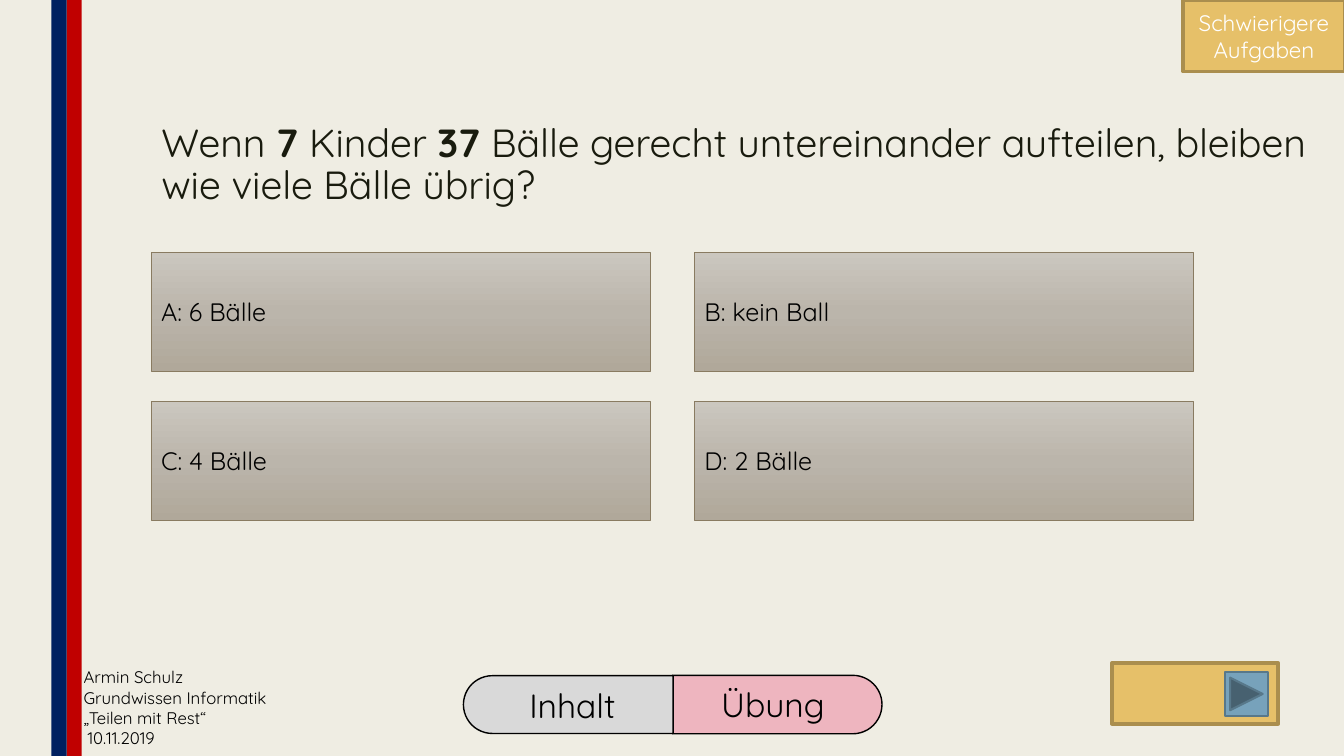
from copy import deepcopy
from dataclasses import dataclass
from typing import NamedTuple

from pptx import Presentation
from pptx.dml.color import RGBColor as RGB
from pptx.enum.shapes import MSO_SHAPE as Shp
from pptx.enum.text import MSO_ANCHOR as Anchor, MSO_AUTO_SIZE as Fit, PP_ALIGN as Align
from pptx.oxml.ns import qn
from pptx.util import Inches, Pt

WIDTH, HEIGHT = Inches(13.333), Inches(7.5)


@dataclass(frozen=True)
class Theme:
    font: str = "Quicksand"
    paper: str = "EFEDE3"
    navy: str = "002060"
    red: str = "C00000"
    black: str = "000000"
    white: str = "FFFFFF"
    ink: str = "191B0E"
    pink: str = "EEB5BF"
    grey: str = "D9D9D9"
    gold: str = "E6C069"
    gold_edge: str = "AA8E4E"
    blue: str = "77A2BB"
    blue_edge: str = "58788A"
    answer_stops: tuple = ("CBC7BF", "BBB5AB", "B0A89A")
    answer_edge: str = "897B61"
    title_pt: int = 28
    tab_pt: int = 24
    answer_pt: int = 18
    tag_pt: int = 16
    footer_pt: int = 12


T = Theme()


class Box(NamedTuple):
    """Place and size in percent of the slide's width and height."""
    x: float
    y: float
    w: float
    h: float

    def emu(self) -> tuple:
        return tuple(round(v * side / 100)
                     for v, side in zip(self, (WIDTH, HEIGHT, WIDTH, HEIGHT)))


@dataclass(frozen=True)
class Panel:
    box: Box
    fill: str
    edge: str = ""
    edge_pt: float = 0
    kind: Shp = Shp.RECTANGLE


@dataclass(frozen=True)
class Tab:
    text: str
    box: Box
    fill: str
    turn: int
    vert: str


STRIPES = [Panel(Box(4.95, 0, 1.13, 100), T.red),
           Panel(Box(3.82, 0, 1.13, 100), T.navy)]
FOOTERS = [(Box(5.78, 95.6, 16.35, 2.93), ["10.11.2019"], Fit.NONE),
           (Box(5.48, 87.6, 16.35, 9.47),
            ["Armin Schulz", "Grundwissen Informatik", "„Teilen mit Rest“"],
            Fit.SHAPE_TO_FIT_TEXT)]
TABS = [Tab("Übung", Box(55.65, 79.33, 4.35, 27.73), T.pink, 90, "vert270"),
        Tab("Inhalt", Box(40.13, 79.33, 4.3, 27.73), T.grey, 270, "vert")]
NEXT_FRAME = Panel(Box(82.73, 87.73, 12.38, 8), T.gold, T.gold_edge, 2.75)
NEXT_BUTTON = Panel(Box(91.13, 88.93, 3.23, 5.73), T.blue, T.blue_edge, 1.5,
                    Shp.ACTION_BUTTON_FORWARD_OR_NEXT)
TAG = Panel(Box(88.05, 0, 12, 9.47), T.gold, T.gold_edge, 2.75)
TITLE_BOX = Box(11.25, 15.73, 86.85, 14.13)
QUESTION = [("Wenn ", False), ("7", True), (" Kinder ", False), ("37", True),
            (" Bälle gerecht untereinander aufteilen, bleiben wie viele Bälle übrig?", False)]
ANSWERS = ["A: 6 Bälle", "B: kein Ball", "C: 4 Bälle", "D: 2 Bälle"]
ANSWER_COLS = 2
FIRST_ANSWER = Box(11.25, 33.33, 37.13, 15.73)
COL_STEP, ROW_STEP = 40.43, 19.73


def add_run(p, text: str, size: float, color: str, bold: bool = False) -> None:
    r = p.add_run()
    r.text = text
    r.font.name, r.font.size = T.font, Pt(size)
    r.font.color.rgb = RGB.from_string(color)
    if bold:
        r.font.bold = True


def write(tf, lines: list, size: float, color: str, align: Align = Align.LEFT,
          anchor: Anchor = Anchor.MIDDLE) -> None:
    tf.word_wrap, tf.vertical_anchor = True, anchor
    for i, line in enumerate(lines):
        p = tf.add_paragraph() if i else tf.paragraphs[0]
        p.alignment = align
        add_run(p, line, size, color)


def add_panel(s, panel: Panel):
    sp = s.shapes.add_shape(panel.kind, *panel.box.emu())
    sp.shadow.inherit = False
    sp.fill.solid()
    sp.fill.fore_color.rgb = RGB.from_string(panel.fill)
    if panel.edge:
        sp.line.color.rgb = RGB.from_string(panel.edge)
        sp.line.width = Pt(panel.edge_pt)
    else:
        sp.line.fill.background()
    return sp


def add_tab(s, tab: Tab) -> None:
    sp = add_panel(s, Panel(tab.box, tab.fill, T.black, 1, Shp.ROUND_2_SAME_RECTANGLE))
    sp.adjustments[0], sp.adjustments[1] = 0.5, 0
    sp.rotation = tab.turn
    write(sp.text_frame, [tab.text], T.tab_pt, T.black, Align.CENTER)
    sp.element.find(".//" + qn("a:bodyPr")).set("vert", tab.vert)


def add_answer(s, index: int, text: str) -> None:
    row, col = divmod(index, ANSWER_COLS)
    box = FIRST_ANSWER._replace(x=FIRST_ANSWER.x + col * COL_STEP,
                                y=FIRST_ANSWER.y + row * ROW_STEP)
    sp = add_panel(s, Panel(box, T.answer_stops[0], T.answer_edge, 0.5))
    sp.fill.gradient()
    sp.fill.gradient_angle = 270
    # A new gradient has two stops; the third is a copy of the first
    stop_list = sp.element.find(".//" + qn("a:gsLst"))
    stop_list.insert(1, deepcopy(stop_list[0]))
    for i, (stop, color) in enumerate(zip(sp.fill.gradient_stops, T.answer_stops)):
        stop.position = i / 2
        stop.color.rgb = RGB.from_string(color)
    write(sp.text_frame, [text], T.answer_pt, T.black)


def add_footer(s, box: Box, lines: list, fit: Fit) -> None:
    tf = s.shapes.add_textbox(*box.emu()).text_frame
    write(tf, lines, T.footer_pt, T.black, anchor=Anchor.TOP)
    tf.auto_size = fit


def set_title(s) -> None:
    title = s.shapes.title
    title.left, title.top, title.width, title.height = TITLE_BOX.emu()
    tf = title.text_frame
    tf.word_wrap, tf.auto_size, tf.vertical_anchor = True, Fit.NONE, Anchor.TOP
    p = tf.paragraphs[0]
    p.alignment, p.line_spacing = Align.LEFT, 0.89
    for text, bold in QUESTION:
        add_run(p, text, T.title_pt, T.ink, bold)


def main() -> None:
    prs = Presentation()
    prs.slide_width, prs.slide_height = WIDTH, HEIGHT
    s = prs.slides.add_slide(prs.slide_layouts[5])
    s.background.fill.solid()
    s.background.fill.fore_color.rgb = RGB.from_string(T.paper)

    # Frame of the slide: stripes, footer and navigation tabs
    for stripe in STRIPES:
        add_panel(s, stripe)
    for box, lines, fit in FOOTERS:
        add_footer(s, box, lines, fit)
    for tab in TABS:
        add_tab(s, tab)

    # Question and answers
    set_title(s)
    for i, answer in enumerate(ANSWERS):
        add_answer(s, i, answer)

    # Next button and level tag
    add_panel(s, NEXT_FRAME)
    add_panel(s, NEXT_BUTTON)
    tag = add_panel(s, TAG)
    write(tag.text_frame, ["Schwierigere", "Aufgaben"], T.tag_pt, T.white, Align.CENTER)

    prs.save("out.pptx")


if __name__ == "__main__":
    main()
